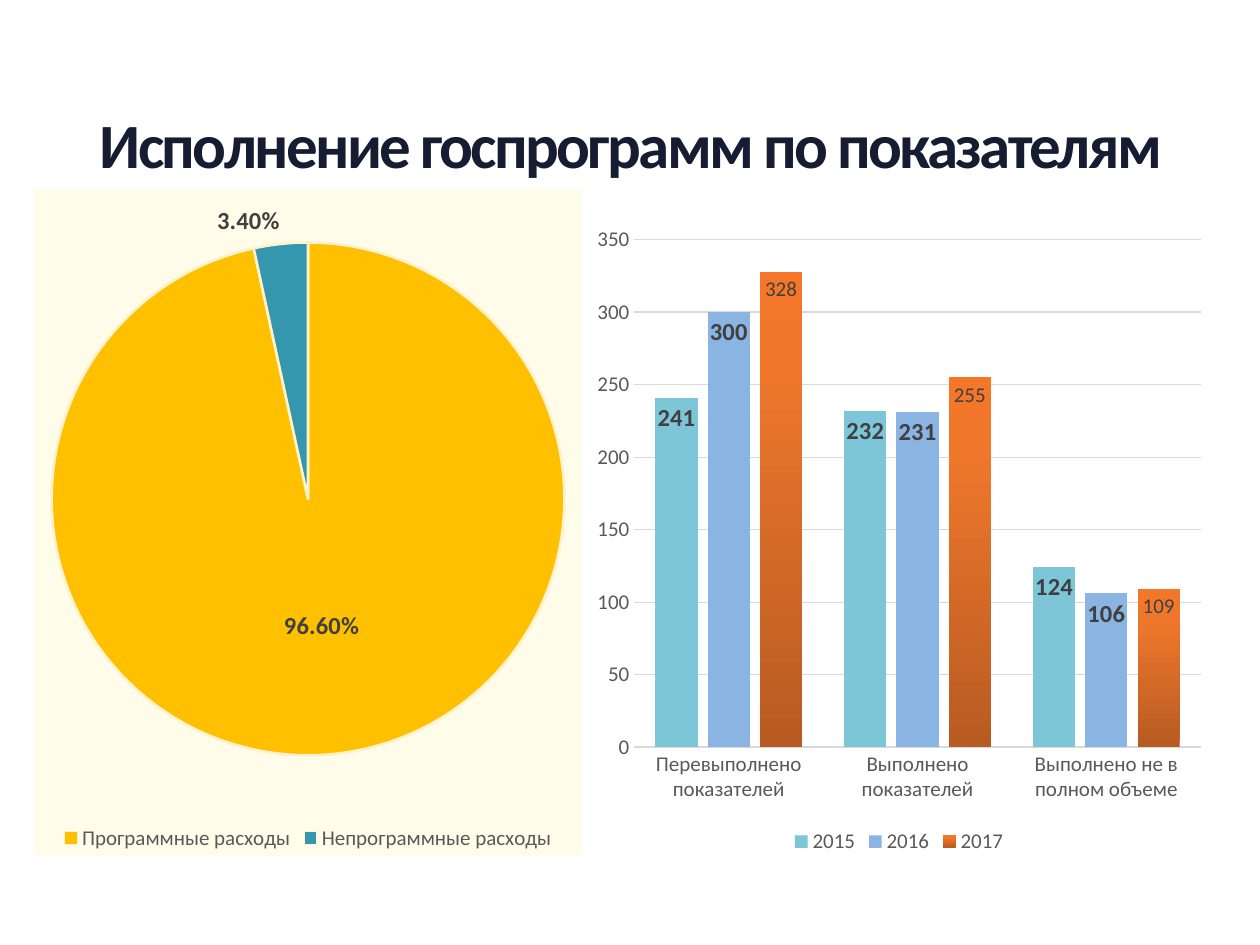
from copy import deepcopy

from lxml import etree
from pptx import Presentation
from pptx import util as u
from pptx.chart.data import CategoryChartData
from pptx.dml.color import RGBColor
from pptx.enum import chart as ch
from pptx.enum import text
from pptx.oxml import ns

NAVY = RGBColor(0x16, 0x1D, 0x32)
GRAY = RGBColor(0x59, 0x59, 0x59)
DARK = RGBColor(0x40, 0x40, 0x40)
GRID = RGBColor(0xD9, 0xD9, 0xD9)
TEAL = RGBColor(0x7C, 0xC6, 0xD8)
BLUE = RGBColor(0x8A, 0xB4, 0xE2)
GOLD = RGBColor(0xFF, 0xC0, 0x00)
SEA = RGBColor(0x34, 0x97, 0xAE)
CREAM = RGBColor(0xFF, 0xFC, 0xEA)
EDGE = RGBColor(0xFF, 0xF2, 0xCC)
ORANGE = [(0, RGBColor(0xB8, 0x5B, 0x22)), (0.8, RGBColor(0xEE, 0x77, 0x2C)),
          (1, RGBColor(0xF3, 0x76, 0x29))]


class Page:
    """Holds the style and the current slide."""

    font_name = "Calibri"

    def __init__(self, deck):
        self.slide = deck.slides.add_slide(deck.slide_layouts[5])

    def style(self, font, size, color, bold=False):
        font.name, font.size, font.bold = self.font_name, u.Pt(size), bold
        font.color.rgb = color

    def title(self, words, left, top, width, height):
        box = self.slide.shapes.title
        box.left, box.top, box.width, box.height = map(u.Cm, (left, top, width, height))
        frame = box.text_frame
        frame.text = words
        frame.word_wrap = False
        frame.auto_size = text.MSO_AUTO_SIZE.NONE
        frame.vertical_anchor = text.MSO_ANCHOR.MIDDLE
        para = frame.paragraphs[0]
        para.alignment = text.PP_ALIGN.CENTER
        span = para.runs[0]
        self.style(span.font, 36, NAVY, True)
        span.font._element.set("spc", "-150")

    def chart(self, kind, categories, series, place, number_format="General"):
        data = CategoryChartData(number_format=number_format)
        data.categories = categories
        for name, values in series:
            data.add_series(name, values)
        chart = self.slide.shapes.add_chart(kind, *map(u.Cm, place), data).chart
        chart.has_title = False
        chart.font.name, chart.font.size = self.font_name, u.Pt(10)
        chart.has_legend = True
        chart.legend.position = ch.XL_LEGEND_POSITION.BOTTOM
        chart.legend.include_in_layout = False
        self.style(chart.legend.font, 12, GRAY)
        return chart

    def gradient(self, fill, stops):
        fill.gradient()
        fill.gradient_angle = 90
        stop_list = fill.gradient_stops[0]._gs.getparent()
        stop_list.insert(1, deepcopy(stop_list[0]))
        for stop, (position, color) in zip(fill.gradient_stops, stops):
            stop.position, stop.color.rgb = position, color

    def columns(self, categories, series, place):
        chart = self.chart(ch.XL_CHART_TYPE.COLUMN_CLUSTERED, categories,
                           [(name, values) for name, values, *_ in series], place)
        for axis in (chart.category_axis, chart.value_axis):
            axis.major_tick_mark = axis.minor_tick_mark = ch.XL_TICK_MARK.NONE
            self.style(axis.tick_labels.font, 12, GRAY)
        chart.category_axis.format.line.color.rgb = GRID
        chart.category_axis.format.line.width = u.Pt(1)
        chart.value_axis.format.line.fill.background()
        grid = chart.value_axis.major_gridlines.format.line
        grid.color.rgb, grid.width = GRID, u.Pt(0.75)
        plot = chart.plots[0]
        plot.gap_width, plot.overlap, plot.vary_by_categories = 100, -24, False
        for bars, (_, _, color, size, bold) in zip(plot.series, series):
            if isinstance(color, list):
                self.gradient(bars.format.fill, color)
            else:
                bars.format.fill.solid()
                bars.format.fill.fore_color.rgb = color
            labels = bars.data_labels
            labels.show_value = True
            labels.position = ch.XL_LABEL_POSITION.INSIDE_END
            self.style(labels.font, size, DARK, bold)

    def pie(self, name, slices, place, plot_area):
        chart = self.chart(ch.XL_CHART_TYPE.PIE, [label for label, *_ in slices],
                           [(name, [value for _, value, *_ in slices])], place, "0.00%")
        space = chart._chartSpace
        backdrop = etree.fromstring(
            f'<c:spPr {ns.nsdecls("c", "a")}><a:solidFill><a:srgbClr val="{CREAM}"/>'
            '</a:solidFill><a:ln><a:noFill/></a:ln></c:spPr>')
        space.find(ns.qn("c:chart")).addnext(backdrop)
        area = space.find(".//" + ns.qn("c:plotArea"))
        for old in area.findall(ns.qn("c:layout")):
            area.remove(old)
        sizes = "".join(f'<c:{key} val="{value}"/>' for key, value in zip("xywh", plot_area))
        area.insert(0, etree.fromstring(
            f'<c:layout {ns.nsdecls("c")}><c:manualLayout><c:layoutTarget val="inner"/>'
            f'<c:xMode val="edge"/><c:yMode val="edge"/>{sizes}</c:manualLayout></c:layout>'))
        plot = chart.plots[0]
        plot.vary_by_categories = True
        labels = plot.series[0].data_labels
        labels.show_value = True
        labels.number_format, labels.number_format_is_linked = "0.00%", False
        self.style(labels.font, 14, DARK, True)
        for index, (_, _, color, position) in enumerate(slices):
            point = plot.series[0].points[index]
            point.format.fill.solid()
            point.format.fill.fore_color.rgb = color
            point.format.line.color.rgb = EDGE
            point.format.line.width = u.Pt(1.5)
            self.style(point.data_label.font, 14, DARK, True)
            point.data_label.position = position


def main():
    deck = Presentation()
    deck.slide_width, deck.slide_height = u.Cm(25.4), u.Cm(19.05)
    page = Page(deck)
    page.title("Исполнение госпрограмм по показателям", 1.57, 1.98, 22.3, 1.8)
    page.columns(
        ["Перевыполнено показателей", "Выполнено показателей", "Выполнено не в полном объеме"],
        [("2015", (241, 232, 124), TEAL, 14, True),
         ("2016", (300, 231, 106), BLUE, 14, True),
         ("2017", (328, 255, 109), ORANGE, 12, False)],
        (11.79, 4.32, 12.67, 13))
    page.pie(
        "Расходы",
        [("Программные расходы", 0.966, GOLD, ch.XL_LABEL_POSITION.CENTER),
         ("Непрограммные расходы", 0.034, SEA, ch.XL_LABEL_POSITION.OUTSIDE_END)],
        (0.71, 3.81, 11, 13.44), (0.03, 0.08, 0.94, 0.77))
    deck.save("out.pptx")


if __name__ == "__main__":
    main()
